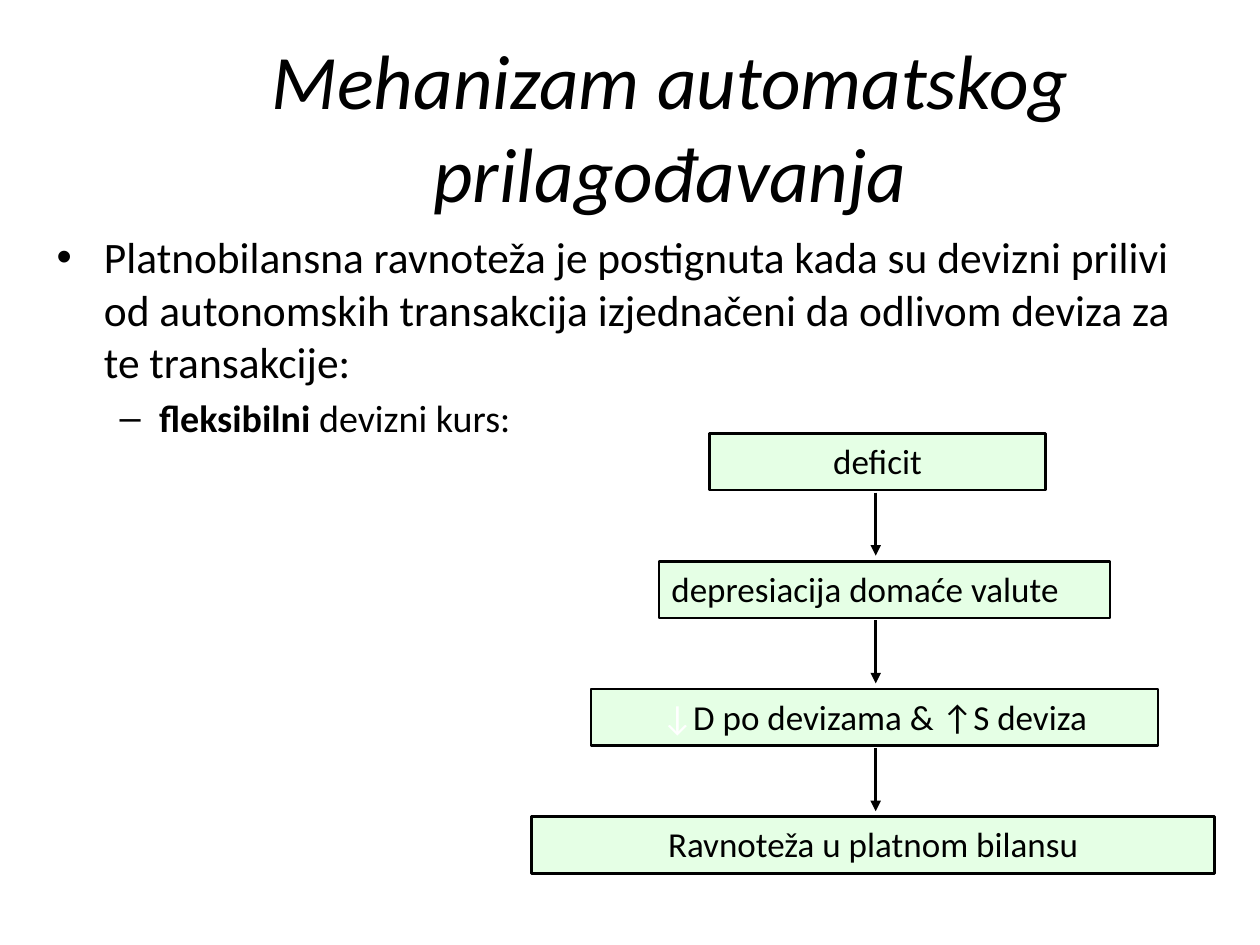
from lxml import etree
from pptx import Presentation
from pptx.dml.color import RGBColor
from pptx.enum.shapes import MSO_CONNECTOR, MSO_SHAPE
from pptx.enum.text import MSO_ANCHOR, MSO_AUTO_SIZE, PP_ALIGN
from pptx.oxml.ns import qn
from pptx.util import Inches, Pt

BLACK = RGBColor(0x00, 0x00, 0x00)
WHITE = RGBColor(0xFF, 0xFF, 0xFF)
PALE_GREEN = RGBColor(0xCC, 0xFF, 0xCC)
LEFT, CENTER = PP_ALIGN.LEFT, PP_ALIGN.CENTER
FONT = "Calibri"


def add_run(paragraph, text, size, color=BLACK, **formats):
    run = paragraph.add_run()
    run.text = text
    run.font.color.rgb = color
    for name, value in {"name": FONT, "size": Pt(size), **formats}.items():
        setattr(run.font, name, value)


def place(shape, left, top, width, height):
    box = {"left": left, "top": top, "width": width, "height": height}
    for name, value in box.items():
        setattr(shape, name, Inches(value))


presentation = Presentation()
presentation.slide_width = Inches(10)
presentation.slide_height = Inches(7.5)
slide = presentation.slides.add_slide(presentation.slide_layouts[1])
title, body = slide.placeholders

# Title
place(title, 1.14, 0.21, 8.36, 1.57)
title.text_frame.auto_size = MSO_AUTO_SIZE.NONE
title.text_frame.vertical_anchor = MSO_ANCHOR.MIDDLE
heading = title.text_frame.paragraphs[0]
heading.alignment = CENTER
add_run(heading, "Mehanizam automatskog prilagođavanja", 44, italic=True)

# List: bullets and indents come from the template
place(body, 0.35, 1.78, 9.06, 1.53)
body.text_frame.auto_size = MSO_AUTO_SIZE.NONE
statement = body.text_frame.paragraphs[0]
statement.space_before = Pt(0)
add_run(statement, "Platnobilansna ravnoteža je postignuta kada su devizni prilivi "
        "od autonomskih transakcija izjednačeni da odlivom deviza za te transakcije:", 24.8)
regime = body.text_frame.add_paragraph()
regime.level = 1
add_run(regime, "fleksibilni", 21.7, bold=True)
add_run(regime, " devizni kurs:", 21.7, bold=False)

# Flow of adjustment: one step per row, an arrow in each gap
FIRST_TOP, ROW_PITCH, STEP_HEIGHT = 3.44, 1.014, 0.45
ARROW_X, ARROW_OFFSET, ARROW_LENGTH = 6.95, 0.47, 0.5
steps = [
    (5.63, 2.67, CENTER, [("deficit", BLACK)]),
    (5.23, 3.58, LEFT, [("depresiacija domaće valute", BLACK)]),
    (4.69, 4.50, CENTER, [("↓", WHITE), ("D po devizama & ↑S deviza", BLACK)]),
    (4.22, 5.42, CENTER, [("Ravnoteža u platnom bilansu", BLACK)]),
]
for row, (left, width, alignment, runs) in enumerate(steps):
    top = FIRST_TOP + row * ROW_PITCH
    step = slide.shapes.add_shape(
        MSO_SHAPE.RECTANGLE, Inches(left), Inches(top), Inches(width), Inches(STEP_HEIGHT))
    step.shadow.inherit = False
    step.fill.solid()
    step.fill.fore_color.rgb = PALE_GREEN
    color_element = step.fill._xPr.find(qn("a:solidFill"))[0]
    etree.SubElement(color_element, qn("a:alpha"), val="50000")
    step.line.color.rgb = BLACK
    step.line.width = Pt(1.5)
    step.text_frame.word_wrap = True
    step.text_frame.auto_size = MSO_AUTO_SIZE.SHAPE_TO_FIT_TEXT
    step.text_frame.vertical_anchor = MSO_ANCHOR.TOP
    paragraph = step.text_frame.paragraphs[0]
    paragraph.alignment = alignment
    for text, color in runs:
        add_run(paragraph, text, 20, color)

for row in range(len(steps) - 1):
    start = FIRST_TOP + row * ROW_PITCH + ARROW_OFFSET
    arrow = slide.shapes.add_connector(
        MSO_CONNECTOR.STRAIGHT, Inches(ARROW_X), Inches(start),
        Inches(ARROW_X), Inches(start + ARROW_LENGTH))
    arrow.line.color.rgb = BLACK
    arrow.line.width = Pt(1.5)
    etree.SubElement(arrow.line._get_or_add_ln(), qn("a:tailEnd"), type="triangle")
    etree.SubElement(arrow._element.spPr, qn("a:effectLst"))

presentation.save("out.pptx")
